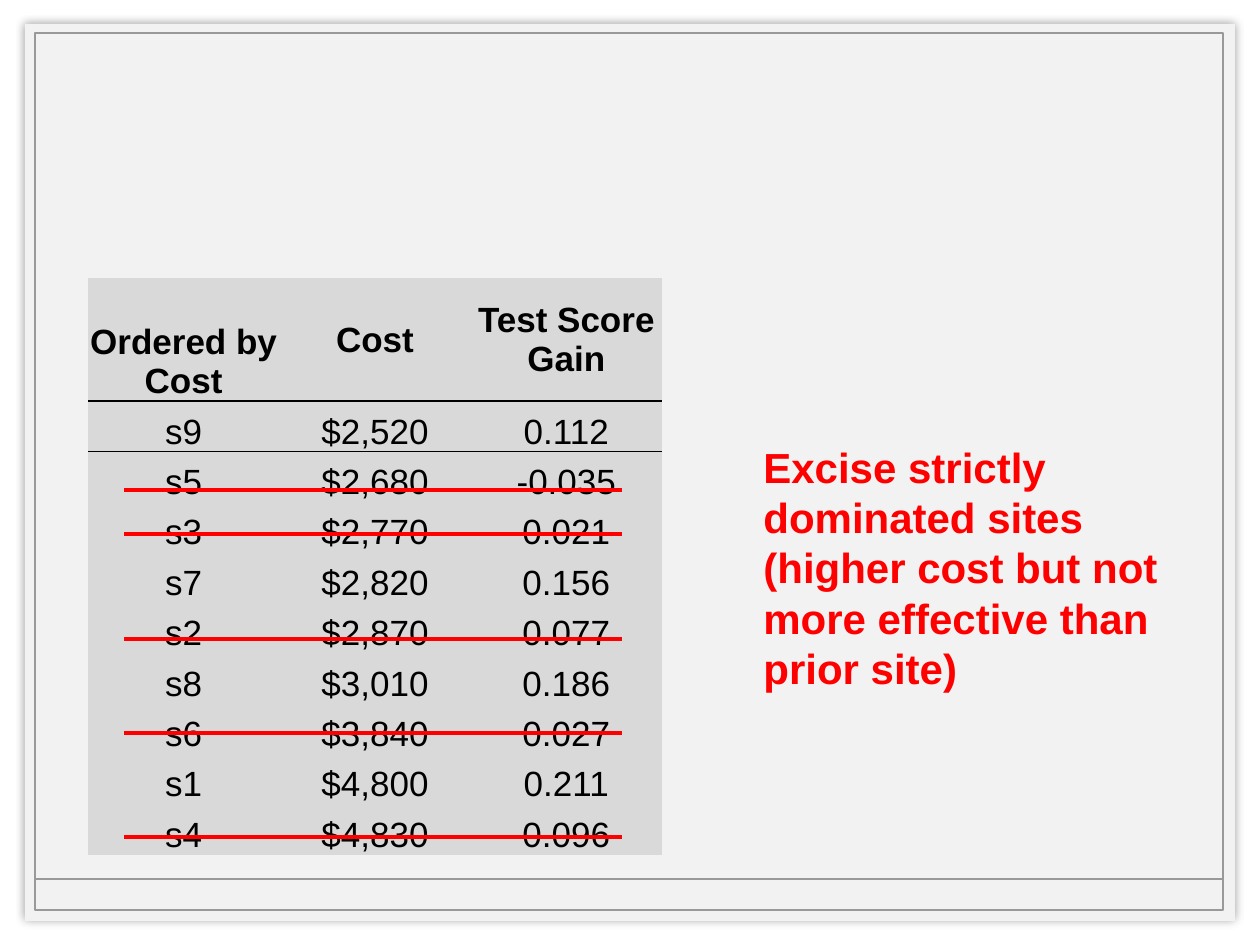
from lxml.etree import SubElement
from pptx import Presentation
from pptx.dml.color import RGBColor
from pptx.enum.shapes import MSO_CONNECTOR as Connector, MSO_SHAPE as Shape
from pptx.enum.text import MSO_ANCHOR as Anchor, PP_ALIGN as Align
from pptx.oxml import parse_xml
from pptx.oxml.ns import nsdecls, qn
from pptx.util import Emu, Pt

# Content
HEADERS = ["Ordered by Cost", "Cost", "Test Score Gain"]
SITES = [
    ("s9", "$2,520", "0.112"),
    ("s5", "$2,680", "-0.035"),
    ("s3", "$2,770", "0.021"),
    ("s7", "$2,820", "0.156"),
    ("s2", "$2,870", "0.077"),
    ("s8", "$3,010", "0.186"),
    ("s6", "$3,840", "0.027"),
    ("s1", "$4,800", "0.211"),
    ("s4", "$4,830", "0.096"),
]
STRIKE_HEIGHTS = [490, 534, 639, 733, 837]
NOTE = ("Excise strictly dominated sites (higher cost but not "
        "more effective than prior site)")

# Layout in px
SLIDE = (1260, 945)
PANEL = (25, 24, 1210, 897)
FRAME = (35, 33, 1188, 877)
FOOTER_Y = 879
TABLE = (88, 278, 574, 577)
HEADER_HEIGHT = 123
STRIKE_LEFT, STRIKE_RIGHT = 124, 622
NOTE_BOX = (751, 435, 420, 267)

FONT = "Arial"
BLACK = RGBColor(0x00, 0x00, 0x00)
RED = RGBColor(0xFF, 0x00, 0x00)
PANEL_GRAY = RGBColor(0xF2, 0xF2, 0xF2)
CELL_GRAY = RGBColor(0xD9, 0xD9, 0xD9)
LINE_GRAY = RGBColor(0x99, 0x99, 0x99)
NO_GRID_STYLE = "{2D5ABB26-0587-4C30-8999-92F81FD0307C}"


def px(length):
    return Emu(round(length * 914400 / 126))


def box(area):
    return [px(length) for length in area]


def style_text(paragraph, size, color, bold):
    font = paragraph.font
    font.name, font.size, font.bold = FONT, Pt(size), bold
    font.color.rgb = color


def add_rectangle(slide, area):
    shape = slide.shapes.add_shape(Shape.RECTANGLE, *box(area))
    shape.shadow.inherit = False
    return shape


def add_rule(slide, left, right, y, color, width):
    line = slide.shapes.add_connector(
        Connector.STRAIGHT, px(left), px(y), px(right), px(y))
    line.line.color.rgb = color
    line.line.width = Pt(width)
    SubElement(line.element.spPr, qn("a:effectLst"))


def add_border(cell, side):
    border = parse_xml(
        f'<a:{side} {nsdecls("a")} w="{Pt(1)}"><a:solidFill>'
        f'<a:srgbClr val="{BLACK}"/></a:solidFill></a:{side}>')
    cell._tc.get_or_add_tcPr().insert(0, border)


def add_site_table(slide):
    rows = [HEADERS, *SITES]
    frame = slide.shapes.add_table(len(rows), len(HEADERS), *box(TABLE))
    table = frame.table
    table.first_row = table.horz_banding = False
    next(frame.element.iter(qn("a:tableStyleId"))).text = NO_GRID_STYLE
    row_height = (TABLE[3] - HEADER_HEIGHT) / len(SITES)
    for column in table.columns:
        column.width = px(TABLE[2] / len(HEADERS))
    for i, values in enumerate(rows):
        table.rows[i].height = px(row_height if i else HEADER_HEIGHT)
        for j, value in enumerate(values):
            cell = table.cell(i, j)
            cell.text = value
            cell.margin_left = cell.margin_right = cell.margin_top = px(1)
            cell.margin_bottom = 0
            is_centred = i == 0 and j > 0
            cell.vertical_anchor = Anchor.MIDDLE if is_centred else Anchor.BOTTOM
            cell.fill.solid()
            cell.fill.fore_color.rgb = CELL_GRAY
            paragraph = cell.text_frame.paragraphs[0]
            paragraph.alignment = Align.CENTER
            style_text(paragraph, 20, BLACK, i == 0)
            if i < 2:
                add_border(cell, "lnT" if i else "lnB")


def main():
    presentation = Presentation()
    presentation.slide_width, presentation.slide_height = box(SLIDE)
    slide = presentation.slides.add_slide(presentation.slide_layouts[6])

    # Panel with a soft shadow
    panel = add_rectangle(slide, PANEL)
    panel.fill.solid()
    panel.fill.fore_color.rgb = PANEL_GRAY
    panel.line.fill.background()
    effects = panel.element.spPr.find(qn("a:effectLst"))
    effects.append(parse_xml(
        f'<a:outerShdw {nsdecls("a")} blurRad="{Pt(5)}" dist="0" dir="0" '
        f'algn="ctr" rotWithShape="0"><a:srgbClr val="{BLACK}">'
        '<a:alpha val="40000"/></a:srgbClr></a:outerShdw>'))

    # Inner frame and footer rule
    frame = add_rectangle(slide, FRAME)
    frame.fill.background()
    frame.line.color.rgb = LINE_GRAY
    frame.line.width = Pt(1)
    add_rule(slide, FRAME[0], FRAME[0] + FRAME[2], FOOTER_Y, LINE_GRAY, 1)

    # Table with the dominated sites struck out
    add_site_table(slide)
    for y in STRIKE_HEIGHTS:
        add_rule(slide, STRIKE_LEFT, STRIKE_RIGHT, y, RED, 2.5)

    # Explanation
    note = slide.shapes.add_textbox(*box(NOTE_BOX)).text_frame
    note.word_wrap = True
    note.text = NOTE
    style_text(note.paragraphs[0], 24, RED, True)

    presentation.save("out.pptx")


if __name__ == "__main__":
    main()
